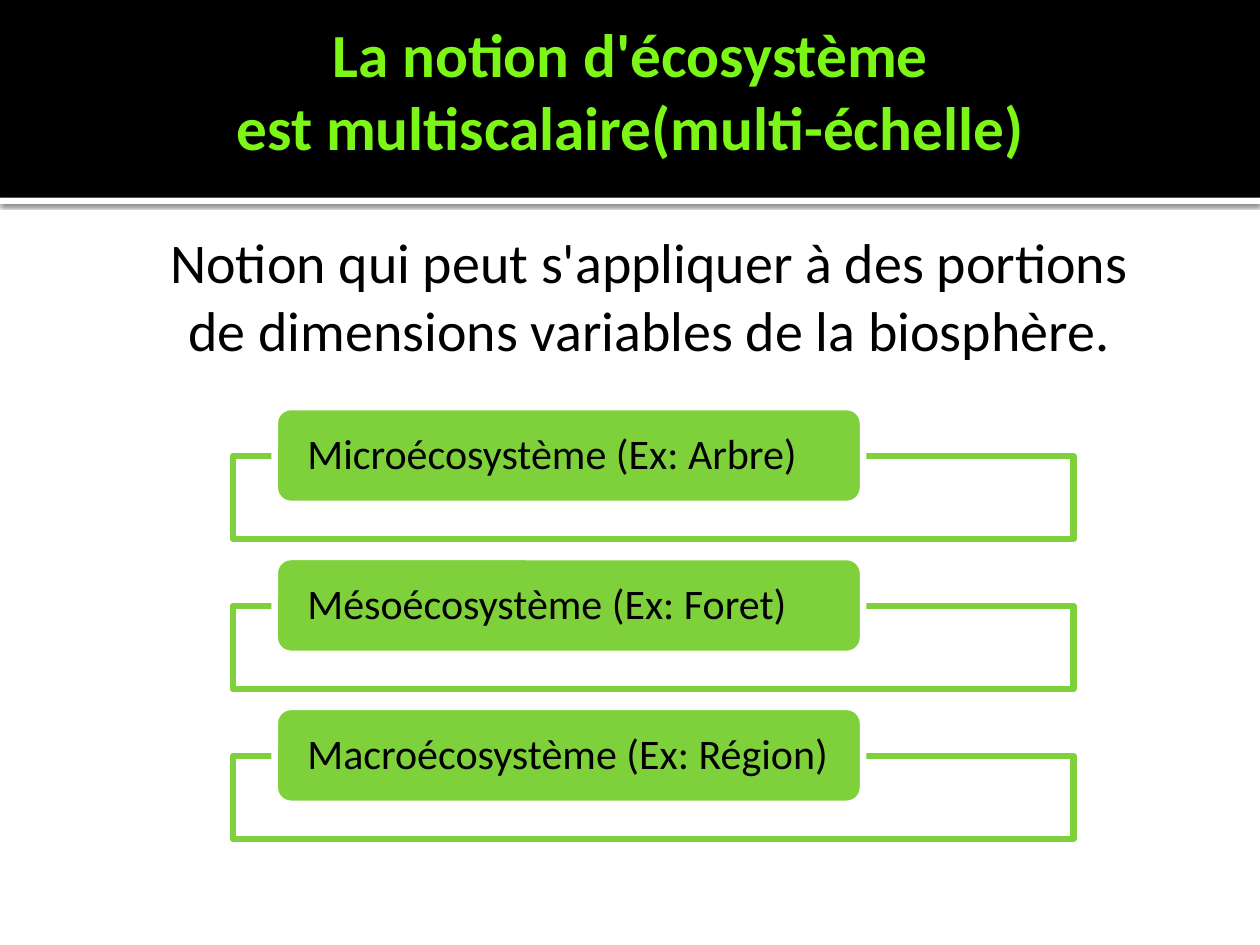
from lxml.etree import SubElement
from pptx import Presentation
from pptx.dml.color import RGBColor
from pptx.enum.shapes import MSO_SHAPE
from pptx.enum.text import MSO_ANCHOR, PP_ALIGN
from pptx.oxml.ns import qn
from pptx.util import Pt

BLACK = RGBColor(0x00, 0x00, 0x00)
WHITE = RGBColor(0xFF, 0xFF, 0xFF)
GREEN = RGBColor(0x7F, 0xD1, 0x3B)
TITLE_GREEN = RGBColor(0x7B, 0xF6, 0x16)
FONT = "Calibri"
LEVELS = [
    "Microécosystème (Ex: Arbre)",
    "Mésoécosystème (Ex: Foret)",
    "Macroécosystème (Ex: Région)",
]
FIRST_LEVEL_TOP = 232.6
LEVEL_PITCH = 85.7


def add_box(slide, kind, bounds, fill, line=None):
    shape = slide.shapes.add_shape(kind, *map(Pt, bounds))
    shape.shadow.inherit = False
    shape.fill.solid()
    shape.fill.fore_color.rgb = fill
    if line is None:
        shape.line.fill.background()
    else:
        shape.line.color.rgb = line
        shape.line.width = Pt(3.78)
    return shape


def set_opacity(shape, percent):
    color = shape.fill._xPr.find(qn("a:solidFill"))[0]
    SubElement(color, qn("a:alpha"), val=str(percent * 1000))


def add_drop_shadow(shape):
    effects = shape._element.spPr.find(qn("a:effectLst"))
    shadow = SubElement(effects, qn("a:outerShdw"), blurRad=str(Pt(2.5)),
                        dist=str(Pt(0.8)), dir="5400000", rotWithShape="0")
    color = SubElement(shadow, qn("a:srgbClr"), val=str(BLACK))
    SubElement(color, qn("a:alpha"), val="60000")


def set_frame(frame, insets, anchor):
    """Apply wrapping, anchor and insets (left, top, right, bottom)."""
    frame.word_wrap = True
    frame.vertical_anchor = anchor
    (frame.margin_left, frame.margin_top,
     frame.margin_right, frame.margin_bottom) = map(Pt, insets)


def add_run(paragraph, text, size, color=BLACK, bold=False):
    run = paragraph.add_run()
    run.text = text
    run.font.name = FONT
    run.font.size = Pt(size)
    run.font.color.rgb = color
    run.font.bold = bold


def add_centred_text(slide, bounds, insets, anchor, lines, **style):
    frame = slide.shapes.add_textbox(*map(Pt, bounds)).text_frame
    set_frame(frame, insets, anchor)
    for index, line in enumerate(lines):
        paragraph = frame.add_paragraph() if index else frame.paragraphs[0]
        paragraph.alignment = PP_ALIGN.CENTER
        add_run(paragraph, line, **style)


def add_header(slide):
    band = add_box(slide, MSO_SHAPE.RECTANGLE, (0, 113, 720, 3.6), WHITE)
    add_drop_shadow(band)
    add_box(slide, MSO_SHAPE.RECTANGLE, (0, 0, 720, 113), BLACK)
    add_centred_text(
        slide, (-14.4, 15.1, 753.8, 72), (7.2, 3.6, 3.6, 3.6), MSO_ANCHOR.MIDDLE,
        ["La notion d'écosystème ", "est multiscalaire(multi-échelle) "],
        size=35, color=TITLE_GREEN, bold=True)


def add_level(slide, top, label):
    """Add an outlined frame with a rounded label over its top edge."""
    frame_box = add_box(slide, MSO_SHAPE.RECTANGLE,
                        (133.2, top + 28, 480.2, 47.5), WHITE, GREEN)
    set_opacity(frame_box, 90)
    label_box = add_box(slide, MSO_SHAPE.ROUNDED_RECTANGLE,
                        (157, top, 336.2, 55.4), GREEN, WHITE)
    set_frame(label_box.text_frame, (16, 0, 16, 0), MSO_ANCHOR.MIDDLE)
    paragraph = label_box.text_frame.paragraphs[0]
    paragraph.alignment = PP_ALIGN.LEFT
    paragraph.line_spacing = 0.9
    add_run(paragraph, label, 24)


def main():
    presentation = Presentation()
    presentation.slide_width = Pt(720)
    presentation.slide_height = Pt(540)
    slide = presentation.slides.add_slide(presentation.slide_layouts[6])
    add_header(slide)
    add_centred_text(
        slide, (65.5, 123.1, 612, 163.4), (13.7, 7.2, 7.2, 3.6), MSO_ANCHOR.TOP,
        ["Notion qui peut s'appliquer à des portions ",
         "de dimensions variables de la biosphère. "], size=32)
    for index, label in enumerate(LEVELS):
        add_level(slide, FIRST_LEVEL_TOP + index * LEVEL_PITCH, label)
    presentation.save("out.pptx")


if __name__ == "__main__":
    main()
